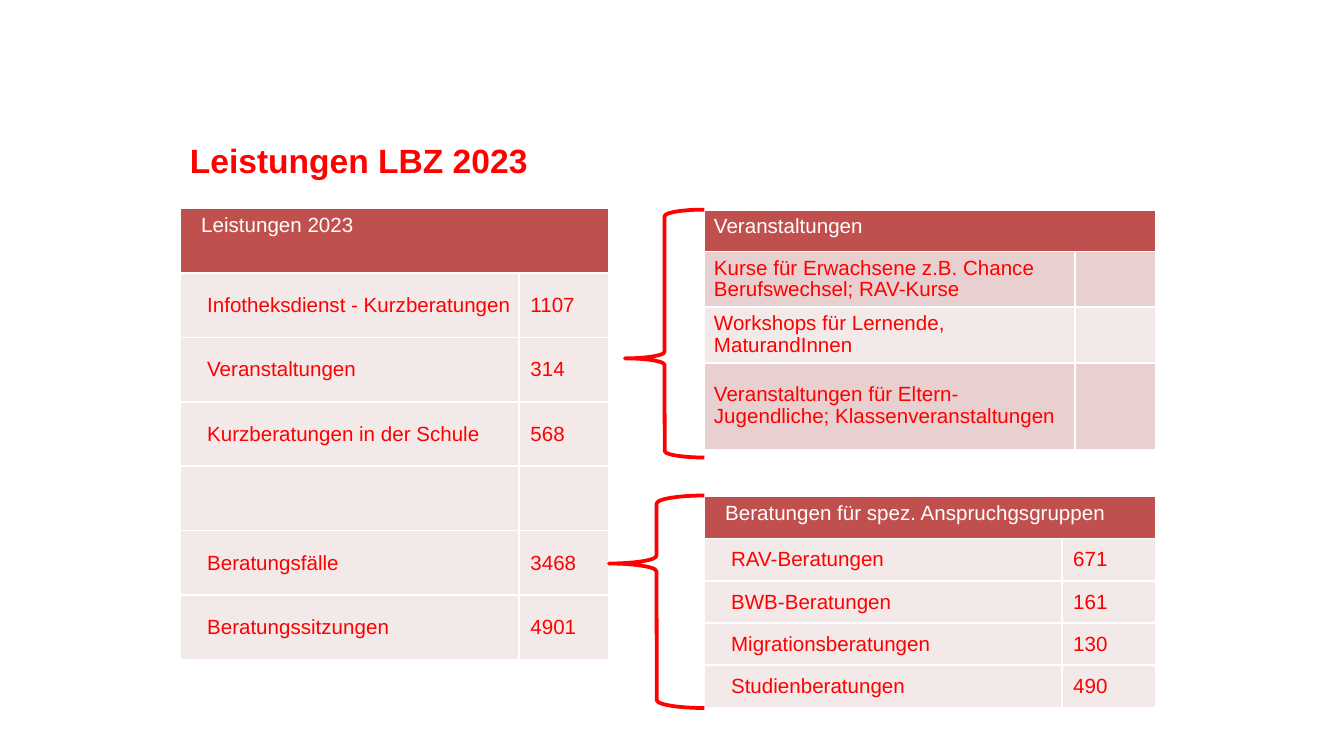
from pptx import Presentation
from pptx.dml.color import RGBColor
from pptx.enum.shapes import MSO_SHAPE
from pptx.enum.text import MSO_ANCHOR, MSO_AUTO_SIZE, PP_ALIGN
from pptx.util import Pt

RED = RGBColor(0xFF, 0x01, 0x00)
TEXT_RED = RGBColor(0xFF, 0x00, 0x00)
WHITE = RGBColor(0xFF, 0xFF, 0xFF)
HEADER = RGBColor(0xC0, 0x50, 0x4D)
BAND_LIGHT = RGBColor(0xF4, 0xE9, 0xE9)
BAND_DARK = RGBColor(0xE8, 0xD0, 0xD0)

LEFT_BRACE = MSO_SHAPE.LEFT_BRACE
TOP, MIDDLE, BOTTOM = MSO_ANCHOR.TOP, MSO_ANCHOR.MIDDLE, MSO_ANCHOR.BOTTOM
LEFT = PP_ALIGN.LEFT
NO_AUTOFIT = MSO_AUTO_SIZE.NONE
TITLE_ONLY = 5

SERVICES = [
    ("Infotheksdienst - Kurzberatungen", "1107"),
    ("Veranstaltungen", "314"),
    ("Kurzberatungen in der Schule", "568"),
    ("", ""),
    ("Beratungsfälle", "3468"),
    ("Beratungssitzungen", "4901"),
]
EVENTS = [
    ("Kurse für Erwachsene z.B. Chance Berufswechsel; RAV-Kurse", ""),
    ("Workshops für Lernende, MaturandInnen", ""),
    ("Veranstaltungen für Eltern-Jugendliche; Klassenveranstaltungen", ""),
]
CONSULTATIONS = [
    ("RAV-Beratungen", "671"),
    ("BWB-Beratungen", "161"),
    ("Migrationsberatungen", "130"),
    ("Studienberatungen", "490"),
]


class SlideBuilder:
    def __init__(self, slide, font="Arial", title_size=18, table_size=11):
        self.slide = slide
        self.font = font
        self.title_size = title_size
        self.table_size = table_size

    def add_text(self, para, text, size, color, bold=False):
        para.alignment = LEFT
        span = para.add_run()
        span.text = text
        span.font.name = self.font
        span.font.size = Pt(size)
        span.font.bold = bold
        span.font.color.rgb = color

    def title(self, text, left, top, width, height):
        box = self.slide.shapes.title
        box.left, box.top, box.width, box.height = map(Pt, (left, top, width, height))
        frame = box.text_frame
        frame.auto_size = NO_AUTOFIT
        frame.vertical_anchor = BOTTOM
        frame.margin_left = Pt(5.25)
        frame.margin_top = frame.margin_right = frame.margin_bottom = 0
        self.add_text(frame.paragraphs[0], text, self.title_size, RED, bold=True)

    def cell(self, cell, text, fill, color, anchor, indent, padding, spacing=1):
        cell.fill.solid()
        cell.fill.fore_color.rgb = fill
        cell.vertical_anchor = anchor
        cell.margin_left = Pt(indent)
        cell.margin_right = Pt(padding)
        cell.margin_top = cell.margin_bottom = Pt(padding / 2)
        para = cell.text_frame.paragraphs[0]
        para.line_spacing = spacing
        para.font.size = Pt(self.table_size)
        if text:
            self.add_text(para, text, self.table_size, color)

    def table(self, heading, records, left, top, widths, heights,
              bands=(BAND_LIGHT,), indents=(11, 14.2, 6), padding=0, spacing=1):
        """Draw a merged heading row above records; indents: heading, label, value."""
        table = self.slide.shapes.add_table(
            len(heights), len(widths), Pt(left), Pt(top),
            Pt(sum(widths)), Pt(sum(heights))).table
        table.horz_banding = False
        for column, width in zip(table.columns, widths):
            column.width = Pt(width)
        for row, height in zip(table.rows, heights):
            row.height = Pt(height)
        table.cell(0, 0).merge(table.cell(0, 1))
        self.cell(table.cell(0, 0), heading, HEADER, WHITE, TOP, indents[0], 5.4)
        for number, record in enumerate(records):
            fill = bands[number % len(bands)]
            for column, text in enumerate(record):
                self.cell(table.cell(number + 1, column), text, fill, TEXT_RED,
                          MIDDLE, indents[column + 1], padding, spacing)

    def brace(self, left, top, width, height, tip):
        """Draw a left brace whose point sits at the fraction tip of its height."""
        brace = self.slide.shapes.add_shape(
            LEFT_BRACE, Pt(left), Pt(top), Pt(width), Pt(height))
        brace.shadow.inherit = False
        brace.fill.background()
        brace.line.color.rgb = RED
        brace.line.width = Pt(2)
        brace.adjustments[0] = 0.083
        brace.adjustments[1] = tip


def main():
    deck = Presentation()
    deck.slide_width, deck.slide_height = Pt(720), Pt(405)
    builder = SlideBuilder(deck.slides.add_slide(deck.slide_layouts[TITLE_ONLY]))

    builder.title("Leistungen LBZ 2023", 96.5, 69.8, 522.7, 26.6)
    builder.table("Leistungen 2023", SERVICES, 96.8, 111.8,
                  (181.4, 47.8), [34.5] * 7)
    builder.table("Veranstaltungen", EVENTS, 377.5, 112.7,
                  (198.5, 43.2), (22.1, 29.8, 29.8, 46.6),
                  bands=(BAND_DARK, BAND_LIGHT), indents=(5, 5, 5),
                  padding=5.4, spacing=0.95)
    builder.brace(334.8, 112.3, 42.5, 132.8, tip=0.6)
    builder.table("Beratungen für spez. Anspruchgsgruppen", CONSULTATIONS,
                  377.5, 266, (191.5, 50.2), [22.6] * 5)
    builder.brace(326.2, 265.5, 51.1, 113.8, tip=0.32)

    deck.save("out.pptx")


if __name__ == "__main__":
    main()
